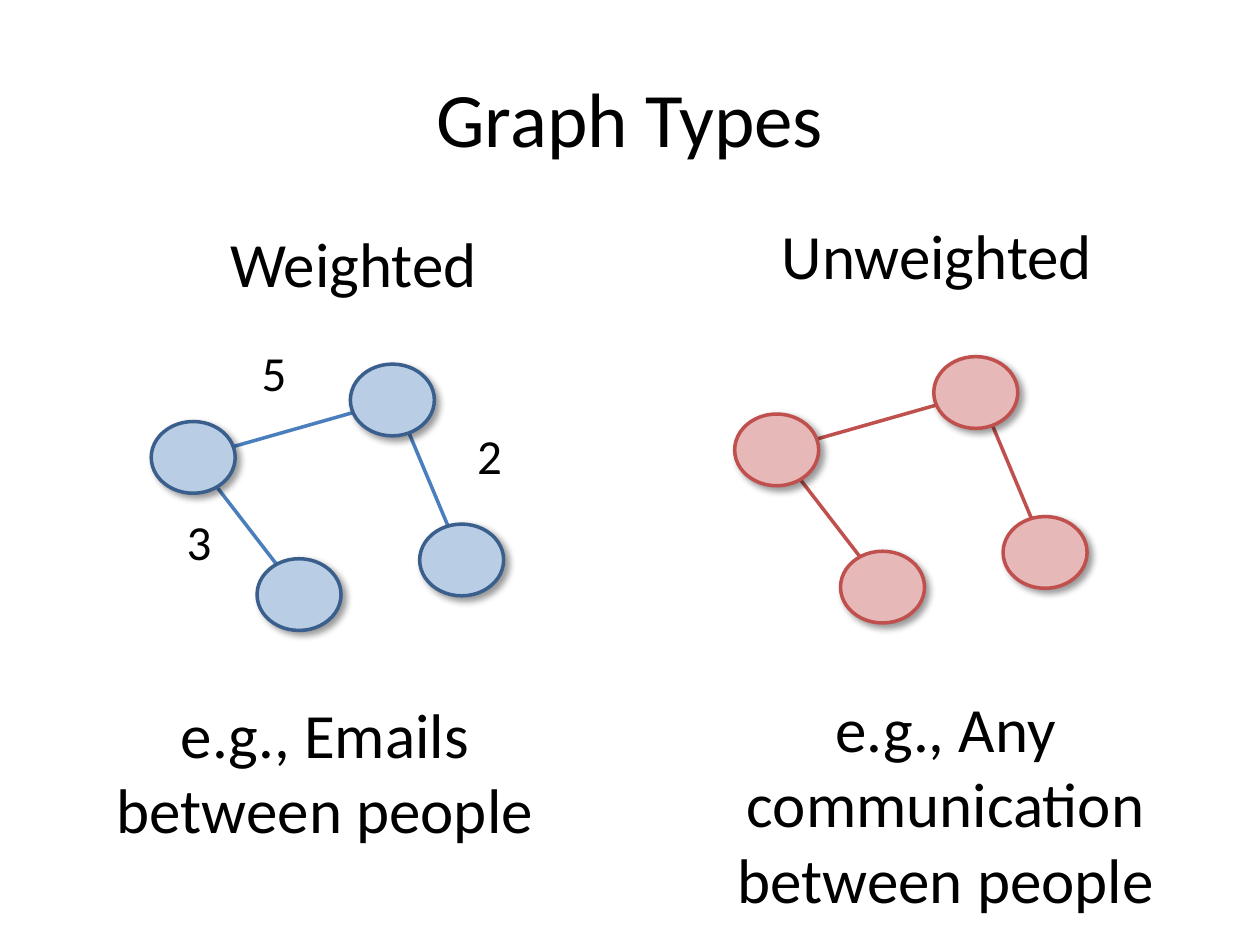
from lxml import etree
from pptx import Presentation
from pptx.dml.color import RGBColor
from pptx.enum.shapes import MSO_CONNECTOR, MSO_SHAPE
from pptx.enum.text import MSO_ANCHOR, PP_ALIGN
from pptx.oxml import parse_xml
from pptx.oxml.ns import qn
from pptx.util import Pt

LINE = MSO_CONNECTOR.STRAIGHT
OVAL = MSO_SHAPE.OVAL
CENTER = PP_ALIGN.CENTER
MIDDLE = MSO_ANCHOR.MIDDLE
FONT = "Calibri"

TITLE = "Graph Types"
NODE_SIZE = (48, 41)
NODES = [(113.8, 0), (153.4, 91.4), (0, 32.8), (60.5, 111.2)]
EDGES = [
    ((24.5, 53.3), (72.5, 115.5)),
    ((35.3, 50.4), (130, 23.5)),
    ((177.8, 112), (143, 29)),
]
GRAPHS = [
    {"origin": (86.4, 208.1), "edge": "4B7EBC", "fill": "B9CDE5", "outline": "3A5F8C"},
    {"origin": (419.8, 203.8), "edge": "C0504D", "fill": "E6B9B8", "outline": "C0504D"},
]
LABELS = [
    ("e.g., Emails between people", 36, (54, 393.8, 263.5, 94.3)),
    ("e.g., Any communication between people", 36, (402.5, 390.2, 275.8, 138.2)),
    ("Weighted", 36, (86.4, 124.6, 231.1, 51.1)),
    ("Unweighted", 36, (419.8, 120.2, 231.1, 51.1)),
    ("5", 28, (98.6, 192.2, 115.9, 41)),
    ("2", 28, (247, 239.8, 65.5, 41)),
    ("3", 28, (83.5, 288.7, 60.5, 41)),
]
SHADOW = (
    '<a:effectLst xmlns:a="http://schemas.openxmlformats.org/drawingml/2006/main">'
    '<a:outerShdw blurRad="50800" dist="38100" dir="2700000" algn="tl" rotWithShape="0">'
    '<a:srgbClr val="000000"><a:alpha val="40000"/></a:srgbClr>'
    "</a:outerShdw></a:effectLst>"
)


def color(value):
    return RGBColor.from_string(value)


def points(values):
    return [Pt(v) for v in values]


def write(tf, text, size):
    tf.word_wrap = True
    p = tf.paragraphs[0]
    p.text = text
    p.alignment = CENTER
    p.font.name = FONT
    p.font.size = Pt(size)
    p.font.color.rgb = color("000000")


def stroke(line, value):
    line.color.rgb = color(value)
    line.width = Pt(2)


def add_edge(s, graph, edge):
    x, y = graph["origin"]
    ends = [v for dx, dy in edge for v in (x + dx, y + dy)]
    sp = s.shapes.add_connector(LINE, *points(ends))
    stroke(sp.line, graph["edge"])
    etree.SubElement(sp._element.spPr, qn("a:effectLst"))


def add_node(s, graph, offset):
    x, y = graph["origin"]
    dx, dy = offset
    sp = s.shapes.add_shape(OVAL, *points((x + dx, y + dy, *NODE_SIZE)))
    sp.fill.solid()
    sp.fill.fore_color.rgb = color(graph["fill"])
    stroke(sp.line, graph["outline"])
    sp._element.spPr.append(parse_xml(SHADOW))


prs = Presentation()
prs.slide_width, prs.slide_height = Pt(720), Pt(540)
s = prs.slides.add_slide(prs.slide_layouts[5])

title = s.shapes.title
title.left, title.top, title.width, title.height = points((36, 21.6, 648, 90))
title.text_frame.vertical_anchor = MIDDLE
write(title.text_frame, TITLE, 44)

for graph in GRAPHS:
    for edge in EDGES:
        add_edge(s, graph, edge)
    for offset in NODES:
        add_node(s, graph, offset)

for text, size, box in LABELS:
    write(s.shapes.add_textbox(*points(box)).text_frame, text, size)

prs.save("out.pptx")
